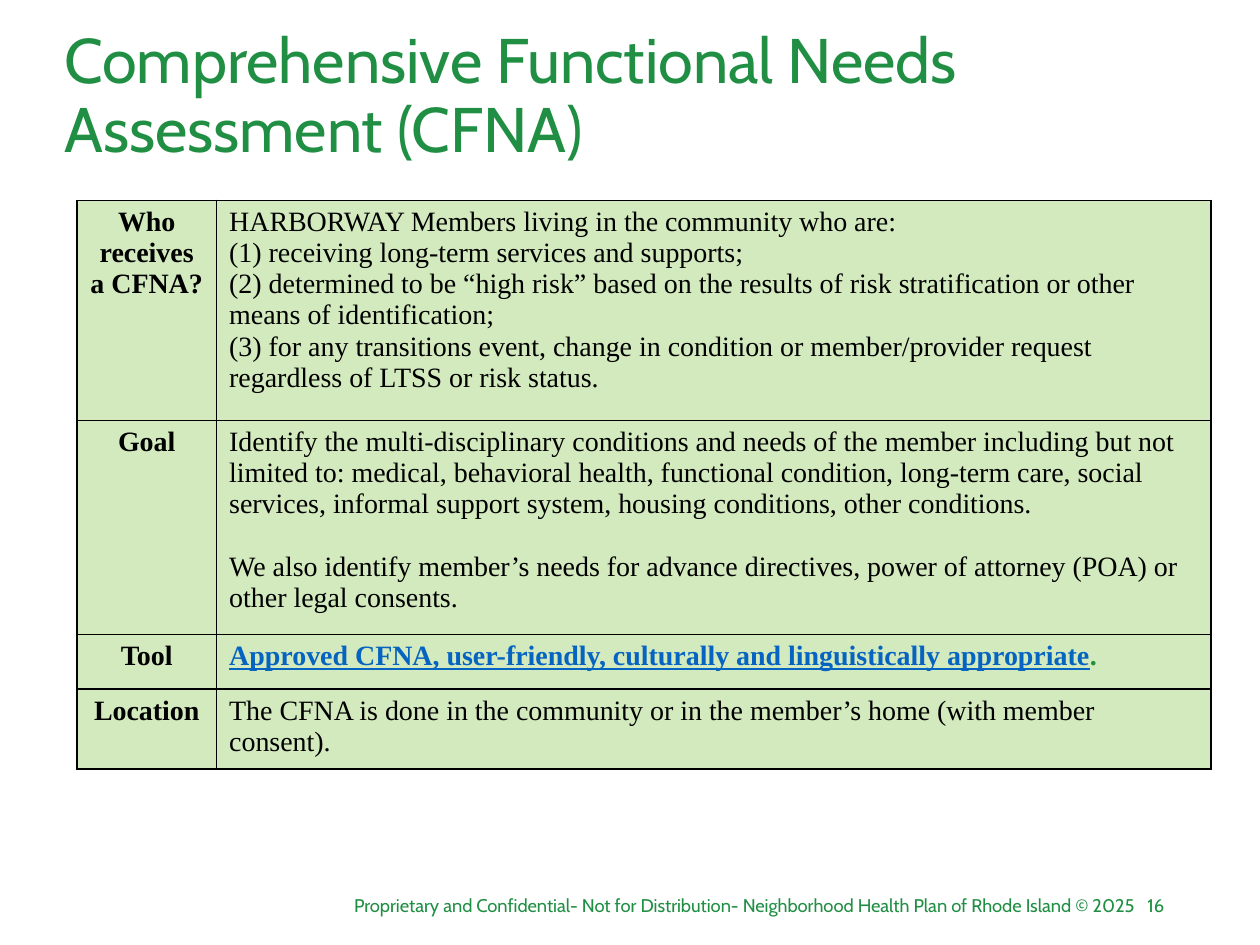
from dataclasses import dataclass

from lxml.etree import SubElement
from pptx import Presentation
from pptx.dml.color import RGBColor
from pptx.enum.text import MSO_ANCHOR, MSO_AUTO_SIZE, PP_ALIGN
from pptx.oxml.ns import qn
from pptx.util import Pt

COLORS = {"green": "208F44", "cell": "7FC242", "link": "0563C1", "black": "000000"}
TITLE_FONT, TABLE_FONT = "Cabin", "Times New Roman"
CELL_OPACITY = 34
LINE_GAP = 17.8


@dataclass
class Run:
    text: str
    color: str = "black"
    bold: bool = False
    underline: bool = False


@dataclass
class Para:
    runs: list[Run]
    before: float = 0


@dataclass
class Row:
    label: str
    height: float
    paras: list[Para]


@dataclass
class FooterItem:
    text: str
    left: float
    width: float


ROWS = [
    Row("Who receives a CFNA?", 125.7, [
        Para([Run("HARBORWAY Members living in the community who are:")]),
        Para([Run("(1) receiving long-term services and supports;")]),
        Para([Run("(2) determined to be “high risk” based on the results of risk "
                  "stratification or other means of identification;")]),
        Para([Run("(3) for any transitions event, change in condition or member/provider "
                  "request regardless of LTSS or risk status.")]),
    ]),
    Row("Goal", 122.3, [
        Para([Run("Identify the multi-disciplinary conditions and needs of the member "
                  "including but not limited to: medical, behavioral health, functional "
                  "condition, long-term care, social services, informal support system, "
                  "housing conditions, other conditions.")]),
        Para([Run("We also identify member’s needs for advance directives, power of "
                  "attorney (POA) or other legal consents.")], before=LINE_GAP),
    ]),
    Row("Tool", 31.4, [
        Para([Run("Approved CFNA, user-friendly, culturally and linguistically appropriate",
                  "link", bold=True, underline=True),
              Run(".", "green", bold=True)]),
    ]),
    Row("Location", 45.7, [
        Para([Run("The CFNA is done in the community or in the member’s home "
                  "(with member consent).")]),
    ]),
]

FOOTER = [
    FooterItem("Proprietary and Confidential- Not for Distribution- "
               "Neighborhood Health Plan of Rhode Island © 2025", 180, 476),
    FooterItem("16", 639.4, 33),
]


def add_run(p, run: Run, font: str, size: float) -> None:
    r = p.add_run()
    r.text = run.text
    r.font.name = font
    r.font.size = Pt(size)
    r.font.bold = run.bold
    r.font.underline = run.underline
    r.font.color.rgb = RGBColor.from_string(COLORS[run.color])


def add_solid_fill(parent, color: str):
    fill = SubElement(parent, qn("a:solidFill"))
    return SubElement(fill, qn("a:srgbClr"), val=COLORS[color])


def style_cell(cell) -> None:
    """Give the cell black borders and a translucent fill."""
    tc_pr = cell._tc.get_or_add_tcPr()
    for side in ("lnL", "lnR", "lnT", "lnB"):
        add_solid_fill(SubElement(tc_pr, qn(f"a:{side}"), w=str(Pt(1))), "black")
    clr = add_solid_fill(tc_pr, "cell")
    SubElement(clr, qn("a:alpha"), val=str(CELL_OPACITY * 1000))


def fill_cell(cell, paras: list[Para], align: PP_ALIGN) -> None:
    style_cell(cell)
    tf = cell.text_frame
    for i, para in enumerate(paras):
        p = tf.add_paragraph() if i else tf.paragraphs[0]
        p.alignment = align
        p.space_before = Pt(para.before)
        for run in para.runs:
            add_run(p, run, TABLE_FONT, 16)


def add_needs_table(s, rows: list[Row]) -> None:
    widths = (79.9, 568.1)
    frame = s.shapes.add_table(len(rows), len(widths), Pt(43.9), Pt(114.5),
                               Pt(sum(widths)), Pt(sum(row.height for row in rows)))
    table = frame.table
    table.first_row = table.horz_banding = False
    for column, width in zip(table.columns, widths):
        column.width = Pt(width)
    for i, row in enumerate(rows):
        table.rows[i].height = Pt(row.height)
        label = Para([Run(row.label, bold=True)])
        fill_cell(table.cell(i, 0), [label], PP_ALIGN.CENTER)
        fill_cell(table.cell(i, 1), row.paras, PP_ALIGN.LEFT)


def add_footer(s, item: FooterItem) -> None:
    sp = s.shapes.add_textbox(Pt(item.left), Pt(507.6), Pt(item.width), Pt(20.2))
    tf = sp.text_frame
    tf.word_wrap = True
    p = tf.paragraphs[0]
    p.alignment = PP_ALIGN.RIGHT
    add_run(p, Run(item.text, "green"), TITLE_FONT, 10.5)


def set_title(s, text: str) -> None:
    sp = s.shapes.title
    sp.left, sp.top, sp.width, sp.height = Pt(29.5), Pt(10.8), Pt(648), Pt(90)
    tf = sp.text_frame
    tf.word_wrap = True
    tf.auto_size = MSO_AUTO_SIZE.NONE
    tf.vertical_anchor = MSO_ANCHOR.MIDDLE
    p = tf.paragraphs[0]
    p.alignment = PP_ALIGN.LEFT
    p.line_spacing = 0.9
    p.space_before = Pt(0)
    add_run(p, Run(text, "green"), TITLE_FONT, 36)


def main() -> None:
    prs = Presentation()
    prs.slide_width, prs.slide_height = Pt(720), Pt(540)
    s = prs.slides.add_slide(prs.slide_layouts[5])
    set_title(s, "Comprehensive Functional Needs Assessment (CFNA)")
    add_needs_table(s, ROWS)
    for item in FOOTER:
        add_footer(s, item)
    prs.save("out.pptx")


if __name__ == "__main__":
    main()
